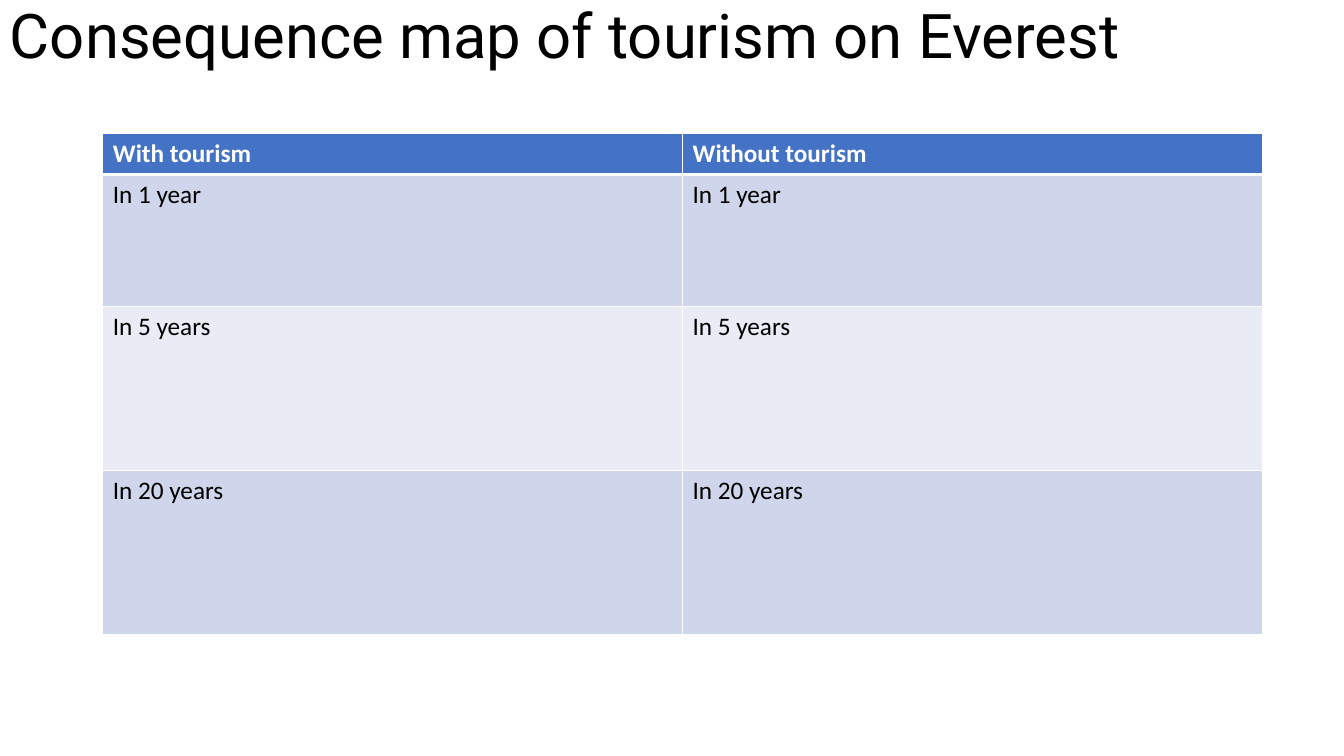
from lxml import etree
from pptx import Presentation
from pptx.dml.color import RGBColor
from pptx.enum.text import MSO_ANCHOR
from pptx.oxml.ns import qn
from pptx.util import Inches, Pt

MIDDLE = MSO_ANCHOR.MIDDLE
COLORS = {
    "black": "000000",
    "white": "FFFFFF",
    "header": "4472C4",
    "odd_row": "CFD5EA",
    "even_row": "E9EBF5",
}
SCENARIOS = ["With tourism", "Without tourism"]
HORIZONS = ["In 1 year", "In 5 years", "In 20 years"]
COLUMN_WIDTH = 5.75
ROW_HEIGHTS = [0.41, 1.31, 1.63, 1.63]


def write(frame, text, font="Calibri", size=18, color="black", bold=False, spacing=1.0):
    paragraph = frame.paragraphs[0]
    paragraph.line_spacing = spacing
    run = paragraph.add_run()
    run.text = text
    run.font.name = font
    run.font.size = Pt(size)
    run.font.bold = bold
    run.font.color.rgb = RGBColor.from_string(COLORS[color])


def add_title(slide, text):
    title = slide.shapes.add_textbox(Inches(0), Inches(-0.34), Inches(12.8), Inches(1.45))
    frame = title.text_frame
    frame.word_wrap = True
    frame.vertical_anchor = MIDDLE
    write(frame, text, font="Roboto", size=44, spacing=0.9)


def set_borders(cell, **widths):
    """Draw white cell borders; widths are points by side, in the order L, R, T, B."""
    properties = cell._tc.get_or_add_tcPr()
    for position, (side, width) in enumerate(widths.items()):
        line = etree.Element(qn(f"a:ln{side}"), w=str(Pt(width)))
        fill = etree.SubElement(line, qn("a:solidFill"))
        etree.SubElement(fill, qn("a:srgbClr"), val=COLORS["white"])
        properties.insert(position, line)


def add_consequence_table(slide):
    rows = [SCENARIOS] + [[horizon] * len(SCENARIOS) for horizon in HORIZONS]
    table = slide.shapes.add_table(
        len(rows), len(SCENARIOS), Inches(1.02), Inches(1.32),
        Inches(COLUMN_WIDTH * len(SCENARIOS)), Inches(sum(ROW_HEIGHTS)),
    ).table
    for column in table.columns:
        column.width = Inches(COLUMN_WIDTH)
    for index, (labels, height) in enumerate(zip(rows, ROW_HEIGHTS)):
        table.rows[index].height = Inches(height)
        is_header = index == 0
        fill = "header" if is_header else "odd_row" if index % 2 else "even_row"
        for cell, label in zip(table.rows[index].cells, labels):
            cell.fill.solid()
            cell.fill.fore_color.rgb = RGBColor.from_string(COLORS[fill])
            set_borders(cell, L=1, R=1, T=3 if index == 1 else 1, B=3 if is_header else 1)
            write(cell.text_frame, label, bold=is_header,
                  color="white" if is_header else "black")


def main():
    presentation = Presentation()
    presentation.slide_width = Inches(13.33)
    presentation.slide_height = Inches(7.5)
    slide = presentation.slides.add_slide(presentation.slide_layouts[6])
    add_title(slide, "Consequence map of tourism on Everest")
    add_consequence_table(slide)
    presentation.save("out.pptx")


if __name__ == "__main__":
    main()
